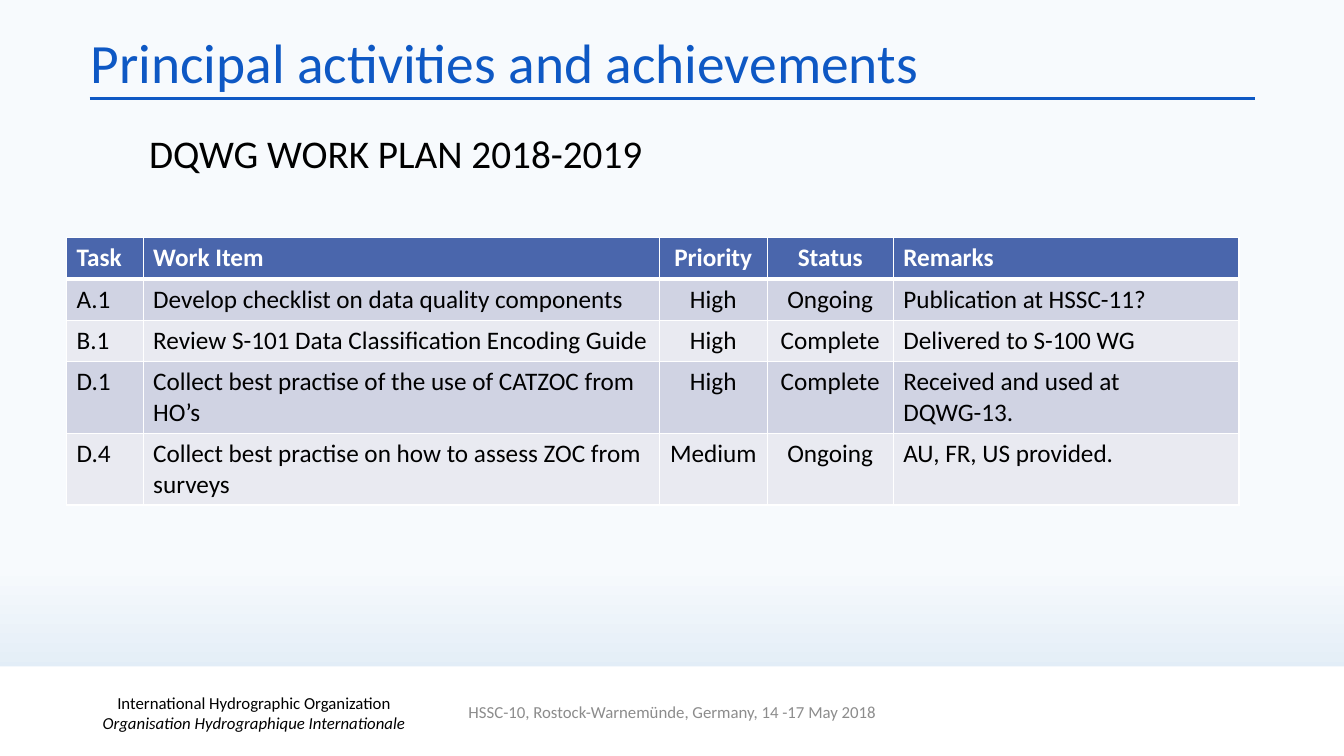
from dataclasses import dataclass

from lxml.etree import SubElement
from pptx import Presentation
from pptx.dml.color import RGBColor
from pptx.enum.shapes import MSO_CONNECTOR as Connector, MSO_SHAPE as Shape
from pptx.enum.text import MSO_ANCHOR as Anchor, MSO_AUTO_SIZE as AutoSize, PP_ALIGN as Align
from pptx.oxml.ns import qn
from pptx.slide import Slide
from pptx.table import _Cell as Cell
from pptx.text.text import Font
from pptx.util import Inches, Pt


@dataclass(frozen=True)
class Theme:
    font: str = "Calibri"
    blue: str = "0E58C4"
    black: str = "000000"
    white: str = "FFFFFF"
    grey: str = "8C8C8C"
    header: str = "4A66AC"
    odd_row: str = "D0D3E3"
    even_row: str = "E9EAF1"
    sky_top: str = "F7FAFD"
    sky_bottom: str = "D0E2F1"
    title_size: float = 39.6
    subtitle_size: float = 28
    table_size: float = 18
    footer_size: float = 12


THEME = Theme()


@dataclass(frozen=True)
class Label:
    text: str
    left: float
    top: float
    width: float
    height: float
    size: float
    color: str
    align: Align = Align.LEFT
    anchor: Anchor = Anchor.MIDDLE
    spacing: float = 1.0
    auto_size: AutoSize = AutoSize.NONE
    italic_second_line: bool = False


@dataclass(frozen=True)
class Column:
    heading: str
    width: float
    align: Align = Align.LEFT


LABELS = [
    Label("International Hydrographic Organization\vOrganisation Hydrographique Internationale",
          0.27, 6.87, 4.5, 0.4, THEME.footer_size, THEME.black, Align.CENTER,
          italic_second_line=True),
    Label("Principal activities and achievements", 0.8, 0.3, 9.82, 0.7,
          THEME.title_size, THEME.blue, spacing=0.9),
    Label("HSSC-10, Rostock-Warnemünde, Germany, 14 -17 May 2018", 4.42, 6.86, 4.5, 0.4,
          THEME.footer_size, THEME.grey, Align.CENTER),
    Label("DQWG WORK PLAN 2018-2019", 1.38, 1.23, 8.23, 0.57,
          THEME.subtitle_size, THEME.black, anchor=Anchor.TOP,
          auto_size=AutoSize.SHAPE_TO_FIT_TEXT),
]

COLUMNS = [
    Column("Task", 0.76),
    Column("Work Item", 5.12),
    Column("Priority", 1.07, Align.CENTER),
    Column("Status", 1.25, Align.CENTER),
    Column("Remarks", 3.43),
]

TASKS = [
    ("A.1", "Develop checklist on data quality components", "High", "Ongoing",
     "Publication at HSSC-11?"),
    ("B.1", "Review S-101 Data Classification Encoding Guide", "High", "Complete",
     "Delivered to S-100 WG"),
    ("D.1", "Collect best practise of the use of CATZOC from HO’s", "High", "Complete",
     "Received and used at\nDQWG-13."),
    ("D.4", "Collect best practise on how to assess ZOC from surveys", "Medium", "Ongoing",
     "AU, FR, US provided."),
]

ROW_HEIGHT = 0.41


def style_font(font: Font, size: float, color: str, bold: bool = False) -> None:
    font.name = THEME.font
    font.size = Pt(size)
    font.bold = bold
    font.color.rgb = RGBColor.from_string(color)


def paint_background(page: Slide) -> None:
    fill = page.background.fill
    fill.gradient()
    fill.gradient_angle = 270
    stops = [(0.75, THEME.sky_top), (1.0, THEME.sky_bottom)]
    for stop, (position, color) in zip(fill.gradient_stops, stops):
        stop.position = position
        stop.color.rgb = RGBColor.from_string(color)


def add_title_rule(page: Slide) -> None:
    rule = page.shapes.add_connector(
        Connector.STRAIGHT, Inches(0.89), Inches(0.98), Inches(12.45), Inches(0.98))
    rule.line.color.rgb = RGBColor.from_string(THEME.blue)
    rule.line.width = Pt(2.25)
    SubElement(rule._element.spPr, qn("a:effectLst"))


def add_footer_band(page: Slide) -> None:
    band = page.shapes.add_shape(
        Shape.RECTANGLE, Inches(0), Inches(6.61), Inches(13.33), Inches(0.92))
    band.shadow.inherit = False
    band.fill.solid()
    band.fill.fore_color.rgb = RGBColor.from_string(THEME.white)
    band.line.fill.background()


def add_label(page: Slide, label: Label) -> None:
    box = page.shapes.add_textbox(
        Inches(label.left), Inches(label.top), Inches(label.width), Inches(label.height))
    frame = box.text_frame
    frame.word_wrap = True
    frame.auto_size = label.auto_size
    frame.vertical_anchor = label.anchor
    para = frame.paragraphs[0]
    para.text = label.text
    para.alignment = label.align
    para.line_spacing = label.spacing
    for span in para.runs:
        style_font(span.font, label.size, label.color)
    if label.italic_second_line:
        para.runs[1].font.italic = True


def add_borders(cell: Cell, bottom_width: float) -> None:
    properties = cell._tc.get_or_add_tcPr()
    widths = {"a:lnL": 1, "a:lnR": 1, "a:lnT": 1, "a:lnB": bottom_width}
    for index, (side, width) in enumerate(widths.items()):
        border = properties.makeelement(qn(side), {"w": str(Pt(width))})
        solid = SubElement(border, qn("a:solidFill"))
        SubElement(solid, qn("a:srgbClr"), val=THEME.white)
        properties.insert(index, border)


def fill_cell(cell: Cell, text: str, align: Align, row: int) -> None:
    is_header = row == 0
    band_color = THEME.odd_row if row % 2 else THEME.even_row
    cell.fill.solid()
    cell.fill.fore_color.rgb = RGBColor.from_string(THEME.header if is_header else band_color)
    cell.text_frame.text = text
    for para in cell.text_frame.paragraphs:
        para.alignment = align
        for span in para.runs:
            style_font(span.font, THEME.table_size,
                       THEME.white if is_header else THEME.black, is_header)
    add_borders(cell, 3 if is_header else 1)


def add_work_plan(page: Slide) -> None:
    rows = [tuple(column.heading for column in COLUMNS), *TASKS]
    width = sum(column.width for column in COLUMNS)
    table = page.shapes.add_table(
        len(rows), len(COLUMNS), Inches(0.66), Inches(2.36),
        Inches(width), Inches(ROW_HEIGHT * len(rows))).table
    for table_column, column in zip(table.columns, COLUMNS):
        table_column.width = Inches(column.width)
    for row, texts in enumerate(rows):
        table.rows[row].height = Inches(ROW_HEIGHT)
        for index, (text, column) in enumerate(zip(texts, COLUMNS)):
            fill_cell(table.cell(row, index), text, column.align, row)


def main() -> None:
    deck = Presentation()
    deck.slide_width, deck.slide_height = Inches(13.33), Inches(7.5)
    page = deck.slides.add_slide(deck.slide_layouts[6])
    paint_background(page)
    add_title_rule(page)
    add_footer_band(page)
    add_work_plan(page)
    for label in LABELS:
        add_label(page, label)
    deck.save("out.pptx")


if __name__ == "__main__":
    main()
